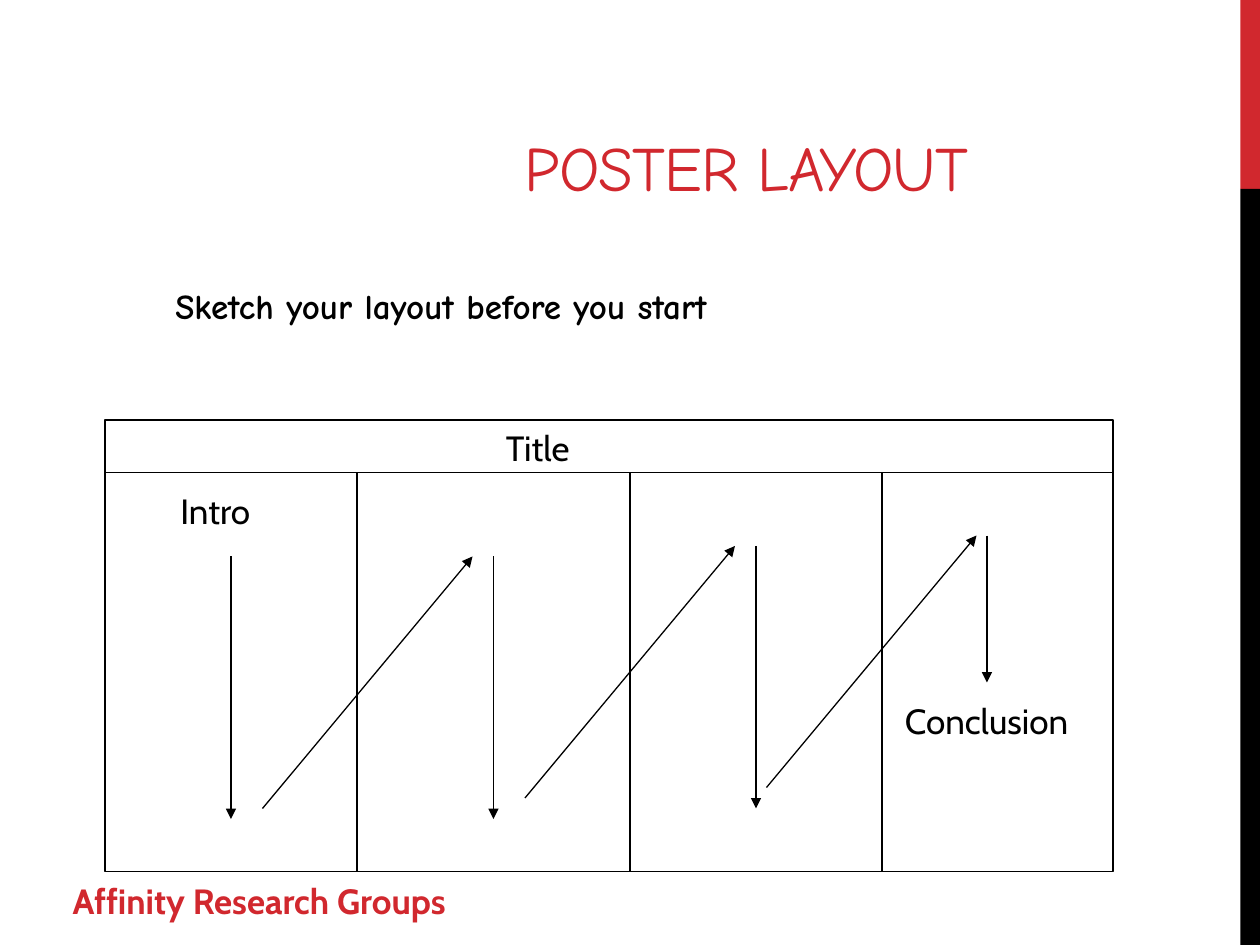
from typing import NamedTuple

from lxml import etree
from pptx import Presentation
from pptx.dml.color import RGBColor
from pptx.enum.shapes import MSO_CONNECTOR, MSO_SHAPE
from pptx.enum.text import MSO_ANCHOR, MSO_AUTO_SIZE, PP_ALIGN
from pptx.oxml.ns import qn
from pptx.util import Pt

RED = RGBColor(0xD1, 0x28, 0x2E)
BLACK = RGBColor(0, 0, 0)
HEAD_FONT, TEXT_FONT = "Comic Neue", "Cabin"
RECT, STRAIGHT = MSO_SHAPE.RECTANGLE, MSO_CONNECTOR.STRAIGHT
NO_FIT = MSO_AUTO_SIZE.NONE

# Poster frame, in points
LEFT, TOP, RIGHT, BOTTOM = 60, 240, 636, 498
HEADER_BOTTOM = 270
COLUMN_EDGES = (204, 360, 504)


class Box(NamedTuple):
    x: float
    y: float
    w: float
    h: float


class Label(NamedTuple):
    text: str
    box: Box
    color: RGBColor = BLACK
    bold: bool = False
    wrap: bool = True


class Line(NamedTuple):
    x1: float
    y1: float
    x2: float
    y2: float


LABELS = (
    Label("Affinity Research Groups", Box(34.5, 499, 247, 31), RED, True, False),
    Label("Title", Box(282, 240, 162, 31)),
    Label("Intro", Box(96, 276, 84, 31)),
    Label("Conclusion", Box(510, 396, 120, 31)),
)
DIVIDERS = (
    Line(LEFT, HEADER_BOTTOM, RIGHT, HEADER_BOTTOM),
    *(Line(x, HEADER_BOTTOM, x, BOTTOM) for x in COLUMN_EDGES),
)
READING_ORDER = (
    Line(132, 318, 132, 468),
    Line(150, 462, 270, 318),
    Line(282, 318, 282, 468),
    Line(300, 456, 420, 312),
    Line(432, 312, 432, 462),
    Line(438, 450, 558, 306),
    Line(564, 306, 564, 390),
)


def place(sp, box: Box) -> None:
    sp.left, sp.top, sp.width, sp.height = map(Pt, box)


def add_run(p, text: str, font: str, size: float, color: RGBColor, bold: bool = False):
    r = p.add_run()
    r.text = text
    r.font.name, r.font.size, r.font.bold = font, Pt(size), bold
    r.font.color.rgb = color
    return r


def add_rect(s, box: Box, fill: RGBColor | None = None):
    """Draw a filled bar, or an outlined frame when no fill is given."""
    sp = s.shapes.add_shape(RECT, *map(Pt, box))
    sp.shadow.inherit = False
    if fill is None:
        sp.fill.background()
        sp.line.color.rgb = BLACK
        sp.line.width = Pt(0.75)
    else:
        sp.fill.solid()
        sp.fill.fore_color.rgb = fill
        sp.line.fill.background()


def add_label(s, label: Label) -> None:
    tf = s.shapes.add_textbox(*map(Pt, label.box)).text_frame
    tf.word_wrap = label.wrap
    add_run(tf.paragraphs[0], label.text, TEXT_FONT, 20, label.color, label.bold)


def add_line(s, line: Line, arrow: bool = False) -> None:
    cx = s.shapes.add_connector(STRAIGHT, *map(Pt, line))
    cx.line.color.rgb = BLACK
    cx.line.width = Pt(0.75)
    if arrow:
        etree.SubElement(cx.line._get_or_add_ln(), qn("a:tailEnd"), type="triangle")
    etree.SubElement(cx._element.spPr, qn("a:effectLst"))


def fill_title(sp) -> None:
    place(sp, Box(104.5, 12, 456, 108))
    tf = sp.text_frame
    tf.auto_size, tf.vertical_anchor = NO_FIT, MSO_ANCHOR.BOTTOM
    p = tf.paragraphs[0]
    p.alignment = PP_ALIGN.RIGHT
    r = add_run(p, "POSTER LAYOUT", HEAD_FONT, 36, RED)
    r._r.get_or_add_rPr().set("spc", "-60")


def fill_body(sp) -> None:
    place(sp, Box(93, 159, 612, 51))
    tf = sp.text_frame
    tf.auto_size = NO_FIT
    p = tf.paragraphs[0]
    p.space_before, p.space_after = Pt(4), Pt(6)
    pPr = p._p.get_or_add_pPr()
    pPr.set("marL", "0")
    pPr.set("indent", "0")
    etree.SubElement(pPr, qn("a:buNone"))
    add_run(p, "Sketch your layout before you start", HEAD_FONT, 20, BLACK, True)


def main() -> None:
    prs = Presentation()
    prs.slide_width, prs.slide_height = Pt(720), Pt(540)
    s = prs.slides.add_slide(prs.slide_layouts[1])
    add_rect(s, Box(708.75, 0, 11.25, 108), RED)
    add_rect(s, Box(708.75, 108, 11.25, 432), BLACK)
    fill_title(s.shapes.title)
    fill_body(s.placeholders[1])
    add_rect(s, Box(LEFT, TOP, RIGHT - LEFT, BOTTOM - TOP))
    for divider in DIVIDERS:
        add_line(s, divider)
    for label in LABELS:
        add_label(s, label)
    for step in READING_ORDER:
        add_line(s, step, arrow=True)
    prs.save("out.pptx")


if __name__ == "__main__":
    main()
